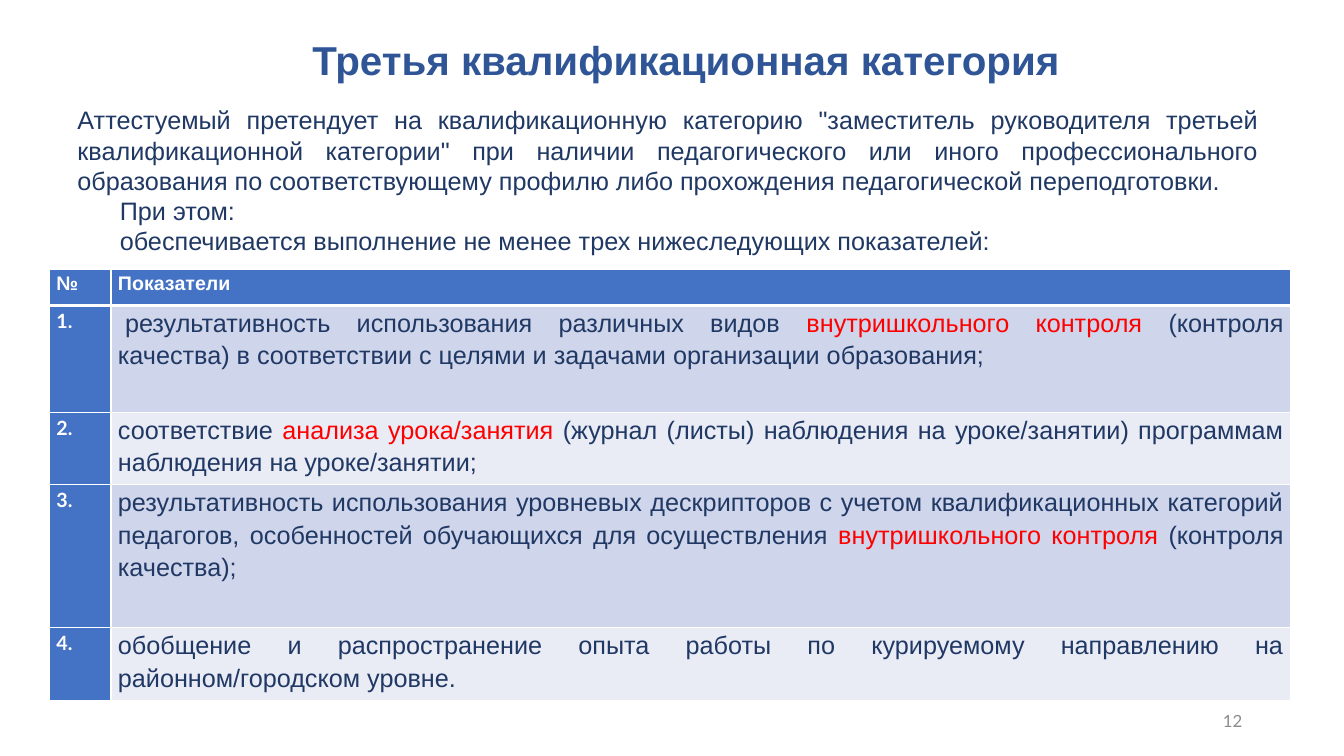
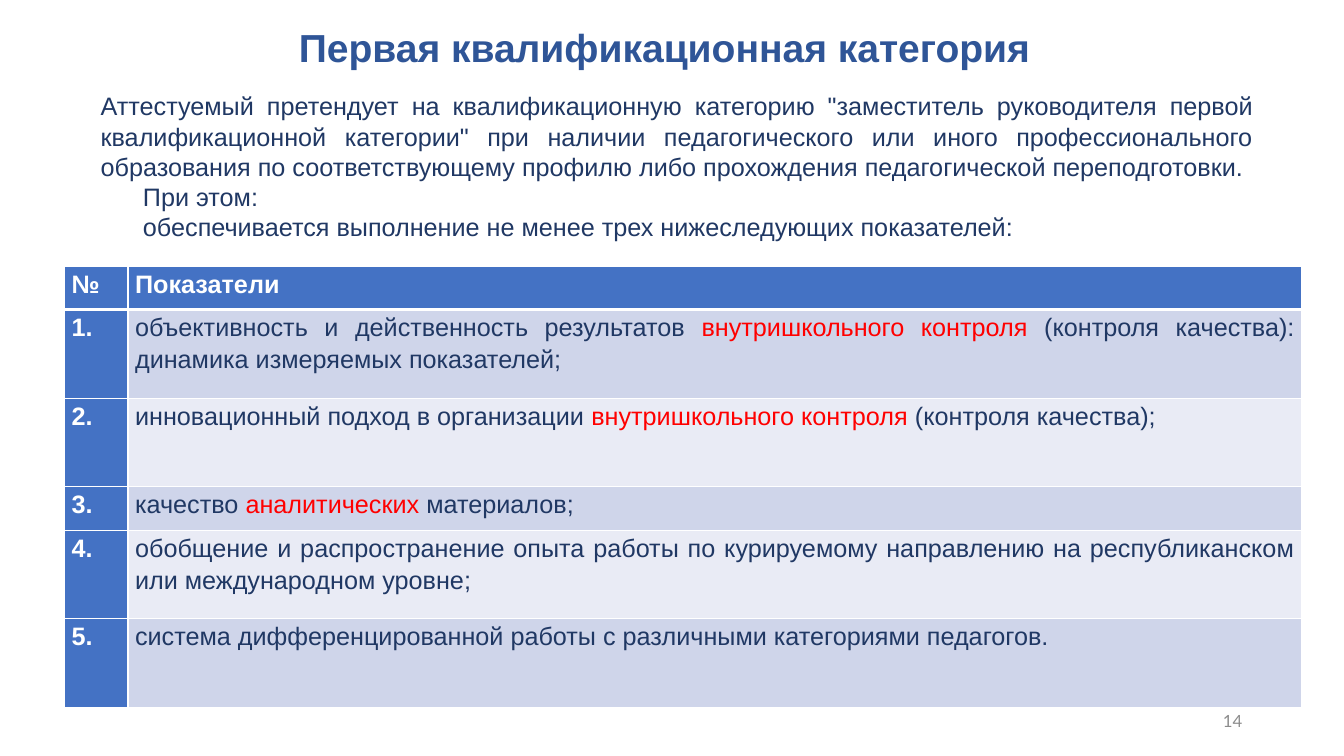
from lxml import etree
from pptx import Presentation
from pptx.dml.color import RGBColor
from pptx.enum.text import MSO_ANCHOR as Anchor, MSO_AUTO_SIZE as Auto, PP_ALIGN as Align
from pptx.oxml.ns import qn
from pptx.util import Inches, Pt

BLUE, HEAD, NAVY, RED = "2F5597", "4472C4", "203864", "FF0000"
WHITE, GREY = "FFFFFF", "8C8C8C"
BANDS = "CFD5EA", "E9EBF5"
SANS, LATO = "Arial", "Lato"


def color(code):
    return RGBColor.from_string(code)


class Deck:
    """Holds the shared style and the current slide."""

    def __init__(self):
        self.prs = Presentation()
        self.prs.slide_width = Inches(13.33)
        self.prs.slide_height = Inches(7.5)
        self.slide = None

    def style(self, par, size, code, bold=False, face=SANS, align=Align.JUSTIFY):
        par.alignment = align
        font = par.font
        font.name, font.size, font.bold = face, Pt(size), bold
        font.color.rgb = color(code)

    def indent(self, par, **gaps):
        for name, gap in gaps.items():
            par._p.get_or_add_pPr().set(name, str(Inches(gap)))

    def title(self, text, box, size):
        self.slide = self.prs.slides.add_slide(self.prs.slide_layouts[5])
        head = self.slide.shapes.title
        head.left, head.top, head.width, head.height = map(Inches, box)
        frame = head.text_frame
        frame.text = text
        frame.word_wrap, frame.auto_size = True, Auto.NONE
        frame.vertical_anchor, frame.margin_top = Anchor.TOP, 0
        par = frame.paragraphs[0]
        par.line_spacing = 0.9
        self.style(par, size, BLUE, True, align=Align.CENTER)

    def box(self, text, box, anchor=Anchor.TOP):
        frame = self.slide.shapes.add_textbox(*map(Inches, box)).text_frame
        frame.word_wrap, frame.vertical_anchor = True, anchor
        frame.text = text
        return frame.paragraphs

    def intro(self, level, box):
        pars = self.box(
            f'Аттестуемый претендует на квалификационную категорию "заместитель руководителя {level} '
            'квалификационной категории" при наличии педагогического или иного профессионального '
            'образования по соответствующему профилю либо прохождения педагогической переподготовки.\n'
            'При этом:\n'
            'обеспечивается выполнение не менее трех нижеследующих показателей:', box)
        for par in pars:
            self.style(par, 18, NAVY)
        for par in pars[1:]:
            self.indent(par, marL=0.42, indent=0)

    def number(self, page):
        par = self.box(str(page), (9.42, 6.95, 3, 0.4), Anchor.MIDDLE)[0]
        self.style(par, 12, GREY, face=LATO, align=Align.RIGHT)

    def border(self, cell, **widths):
        props = cell._tc.get_or_add_tcPr()
        for side in "LRTB":
            line = etree.SubElement(props, qn(f"a:ln{side}"), w=str(Pt(widths.get(side, 1))))
            fill = etree.SubElement(line, qn("a:solidFill"))
            etree.SubElement(fill, qn("a:srgbClr"), val=WHITE)

    def cell(self, cell, text, back, size, code, bold=True, face=SANS):
        """Fill one cell; text between asterisks turns red."""
        cell.fill.solid()
        cell.fill.fore_color.rgb = color(back)
        cell.margin_left = cell.margin_right = Inches(0.07)
        cell.margin_top = cell.margin_bottom = 0
        par = cell.text_frame.paragraphs[0]
        par.line_spacing = 1.15
        self.style(par, size, code, bold, face)
        for i, part in enumerate(text.split("*")):
            if part:
                run = par.add_run()
                run.text = part
                if i % 2:
                    run.font.color.rgb = color(RED)
        return par

    def table(self, items, spot, cols, rows, size, face):
        shape = self.slide.shapes.add_table(
            len(rows), 2, *map(Inches, (*spot, sum(cols), sum(rows))))
        grid = shape.table
        for col, width in zip(grid.columns, cols):
            col.width = Inches(width)
        for row, height in zip(grid.rows, rows):
            row.height = Inches(height)

        # Header row
        for cell, text in zip(grid.rows[0].cells, ("№", "Показатели")):
            self.border(cell, B=3)
            self.cell(cell, text, HEAD, size, WHITE)

        # Numbered rows in two bands
        for i, text in enumerate(items, 1):
            num, item = grid.rows[i].cells
            for cell in (num, item):
                self.border(cell, T=3 if i == 1 else 1)
            self.cell(num, f"{i}.", HEAD, size, WHITE, face=face)
            self.cell(item, text, BANDS[(i - 1) % 2], 18, NAVY, False)
        return grid


def main():
    deck = Deck()

    # Third category
    deck.title("Третья квалификационная категория", (0.92, 0.4, 11.77, 0.84), 28.8)
    deck.number(12)
    deck.intro("третьей", (0.67, 0.99, 11.91, 1.6))
    grid = deck.table([
        "результативность использования различных видов *внутришкольного контроля* (контроля качества) "
        "в соответствии с целями и задачами организации образования;",
        "соответствие *анализа урока/занятия* (журнал (листы) наблюдения на уроке/занятии) программам "
        "наблюдения на уроке/занятии;",
        "результативность использования уровневых дескрипторов с учетом квалификационных категорий "
        "педагогов, особенностей обучающихся для осуществления *внутришкольного контроля* "
        "(контроля качества);",
        "обобщение и распространение опыта работы по курируемому направлению на "
        "районном/городском уровне.",
    ], (0.49, 2.67), (0.61, 11.7), (0.36, 1.06, 0.72, 1.42, 0.72), 14, LATO)
    deck.indent(grid.cell(1, 1).text_frame.paragraphs[0], indent=0.07)

    # First category
    deck.title("Первая квалификационная категория", (0.92, 0.29, 11.34, 0.79), 27.9)
    deck.number(14)
    deck.intro("первой", (0.9, 0.85, 11.63, 1.6))
    deck.table([
        "объективность и действенность результатов *внутришкольного контроля* (контроля качества): "
        "динамика измеряемых показателей;",
        "инновационный подход в организации *внутришкольного контроля* (контроля качества);",
        "качество *аналитических* материалов;",
        "обобщение и распространение опыта работы по курируемому направлению на республиканском "
        "или международном уровне;",
        "система дифференцированной работы с различными категориями педагогов.",
    ], (0.64, 2.64), (0.63, 11.64), (0.43, 0.88, 0.88, 0.43, 0.88, 0.88), 18, SANS)

    deck.prs.save("out.pptx")


if __name__ == "__main__":
    main()
